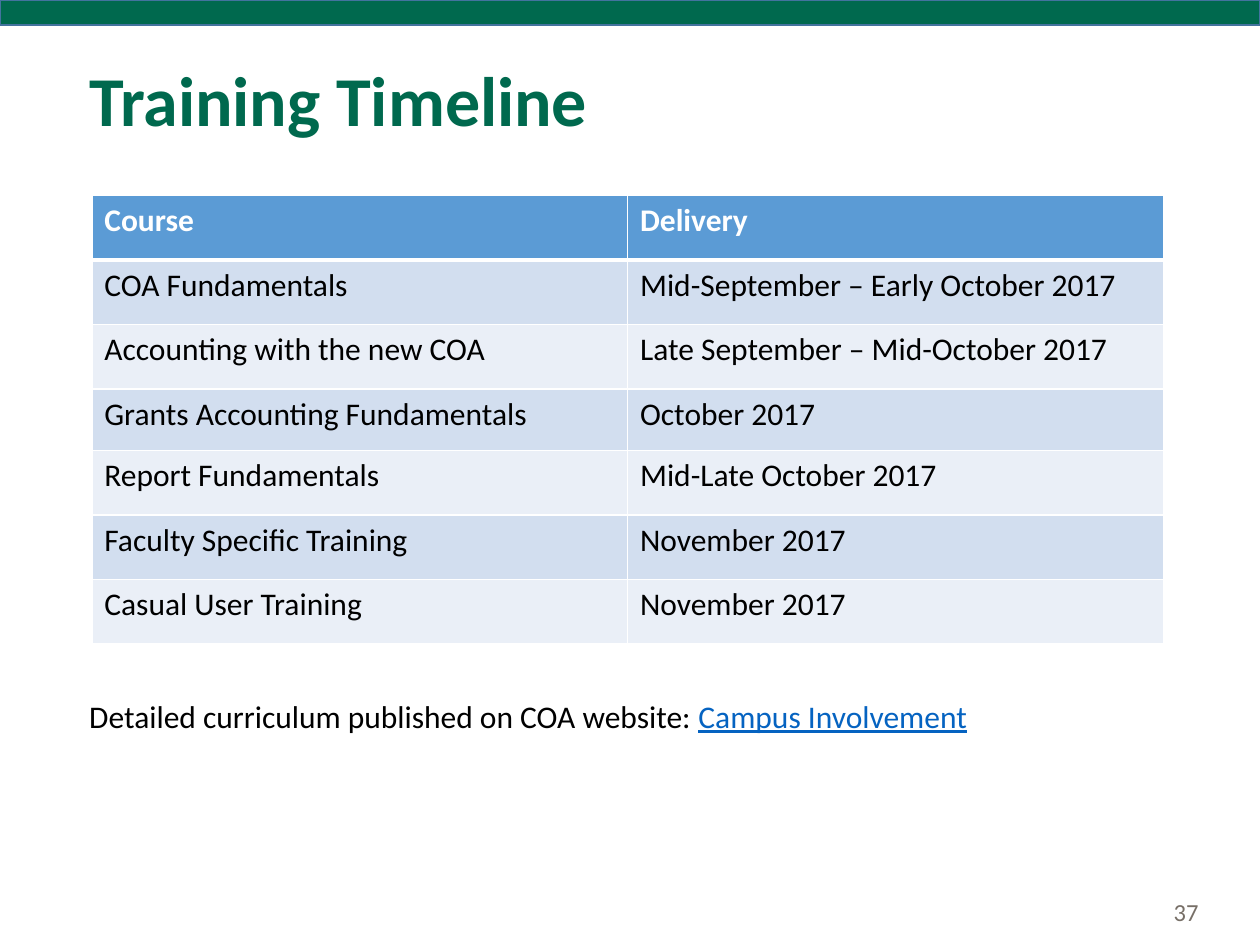
from lxml import etree
from pptx import Presentation
from pptx.dml.color import RGBColor
from pptx.enum.shapes import MSO_SHAPE
from pptx.enum.text import MSO_ANCHOR, PP_ALIGN
from pptx.oxml.ns import qn
from pptx.util import Cm, Pt

RECT = MSO_SHAPE.RECTANGLE
TOP, MIDDLE = MSO_ANCHOR.TOP, MSO_ANCHOR.MIDDLE
LEFT, RIGHT = PP_ALIGN.LEFT, PP_ALIGN.RIGHT

GREEN = RGBColor(0x00, 0x69, 0x4E)
OUTLINE = RGBColor(0x43, 0x73, 0x9E)
GRAY = RGBColor(0x77, 0x6F, 0x67)
BLUE = RGBColor(0x5B, 0x9B, 0xD5)
BANDS = (RGBColor(0xD2, 0xDE, 0xEF), RGBColor(0xEA, 0xEF, 0xF7))
LINK = RGBColor(0x05, 0x63, 0xC1)
WHITE = RGBColor(0xFF, 0xFF, 0xFF)
BLACK = RGBColor(0x00, 0x00, 0x00)
FONT = "Calibri"

TITLE = "Training Timeline"
COURSES = [
    ("Course", "Delivery"),
    ("COA Fundamentals", "Mid-September – Early October 2017"),
    ("Accounting with the new COA", "Late September – Mid-October 2017"),
    ("Grants Accounting Fundamentals", "October 2017"),
    ("Report Fundamentals", "Mid-Late October 2017"),
    ("Faculty Specific Training", "November 2017"),
    ("Casual User Training", "November 2017"),
]
ROW_HEIGHTS = (1.3, 1.3, 1.3, 1.24, 1.3, 1.3, 1.3)
COLUMN_WIDTH = 10.8
NOTE = "Detailed curriculum published on COA website: "
NOTE_LINK = "Campus Involvement"
PAGE = "37"


def style(r, size, color, bold=False):
    r.font.name = FONT
    r.font.size = Pt(size)
    r.font.bold = bold
    r.font.color.rgb = color


def add_text(s, box, text, size, color, bold=False, anchor=TOP, align=LEFT):
    tf = s.shapes.add_textbox(*map(Cm, box)).text_frame
    tf.word_wrap = True
    tf.vertical_anchor = anchor
    p = tf.paragraphs[0]
    p.text = text
    p.alignment = align
    style(p.runs[0], size, color, bold)
    return p


def set_borders(cell, bottom, top):
    tcPr = cell._tc.get_or_add_tcPr()
    widths = (("a:lnL", 1), ("a:lnR", 1), ("a:lnT", top), ("a:lnB", bottom))
    for i, (tag, width) in enumerate(widths):
        ln = etree.Element(qn(tag), w=str(Pt(width)))
        fill = etree.SubElement(ln, qn("a:solidFill"))
        etree.SubElement(fill, qn("a:srgbClr"), val=str(WHITE))
        tcPr.insert(i, ln)


def add_courses(s):
    width, height = COLUMN_WIDTH * 2, sum(ROW_HEIGHTS)
    table = s.shapes.add_table(
        len(COURSES), 2, Cm(1.85), Cm(3.94), Cm(width), Cm(height)
    ).table
    for column in table.columns:
        column.width = Cm(COLUMN_WIDTH)
    for i, row in enumerate(COURSES):
        table.rows[i].height = Cm(ROW_HEIGHTS[i])
        header = i == 0
        for j, text in enumerate(row):
            cell = table.cell(i, j)
            cell.text = text
            cell.fill.solid()
            cell.fill.fore_color.rgb = BLUE if header else BANDS[(i - 1) % 2]
            set_borders(cell, 3 if header else 1, 3 if i == 1 else 1)
            r = cell.text_frame.paragraphs[0].runs[0]
            style(r, 18, WHITE if header else BLACK, header)


def main():
    prs = Presentation()
    prs.slide_width, prs.slide_height = Cm(25.4), Cm(19.05)
    s = prs.slides.add_slide(prs.slide_layouts[6])

    add_text(s, (16.79, 17.86, 7.62, 1.02), PAGE, 14, GRAY,
             anchor=MIDDLE, align=RIGHT)

    bar = s.shapes.add_shape(RECT, 0, 0, prs.slide_width, Cm(0.51))
    bar.shadow.inherit = False
    bar.fill.solid()
    bar.fill.fore_color.rgb = GREEN
    bar.line.color.rgb = OUTLINE
    bar.line.width = Pt(1)

    p = add_text(s, (1.55, 0.25, 21.89, 3.68), TITLE, 40, GREEN,
                 bold=True, anchor=MIDDLE)
    p.line_spacing = 0.9

    add_courses(s)

    p = add_text(s, (1.55, 13.92, 20.57, 1.02), NOTE, 18, BLACK)
    r = p.add_run()
    r.text = NOTE_LINK
    style(r, 18, LINK)
    r.font.underline = True

    prs.save("out.pptx")


if __name__ == "__main__":
    main()
